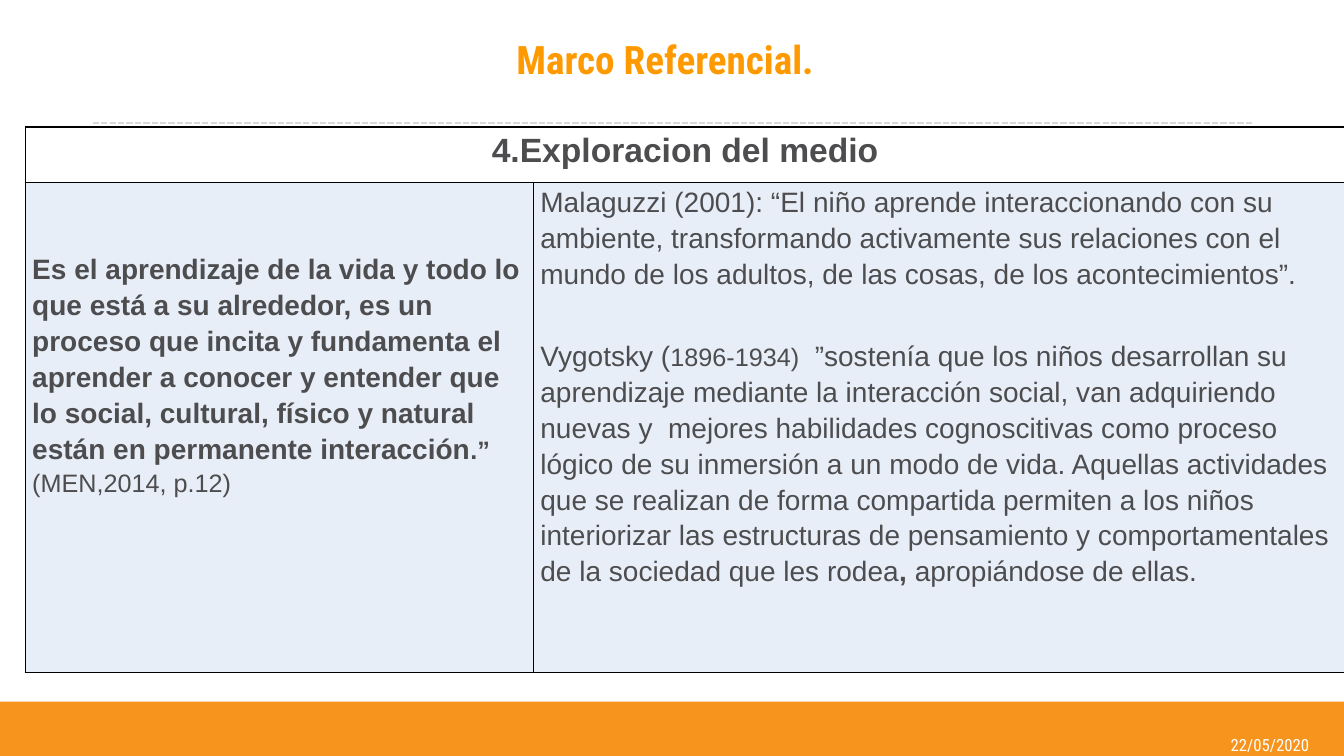
from lxml import etree
from pptx import Presentation
from pptx.dml.color import RGBColor
from pptx.enum.dml import MSO_LINE
from pptx.enum.shapes import MSO_CONNECTOR, MSO_SHAPE
from pptx.enum.text import MSO_ANCHOR, PP_ALIGN
from pptx.oxml.ns import qn
from pptx.util import Inches, Pt

COLORS = {
    "band": "F7941D", "title": "FF9900", "rule": "D9D9D9",
    "text": "4D4D4F", "cell": "E8EEF8", "white": "FFFFFF", "border": "000000",
}
HEADING_FONT = "Roboto Condensed"


def rgb(name):
    return RGBColor.from_string(COLORS[name])


def add_run(p, text, size, color="text", font="Arial", bold=False):
    r = p.add_run()
    r.text = text
    r.font.size = Pt(size)
    r.font.name = font
    r.font.bold = bold
    r.font.color.rgb = rgb(color)


prs = Presentation()
prs.slide_width, prs.slide_height = Inches(13.33), Inches(7.5)
slide = prs.slides.add_slide(prs.slide_layouts[5])
shapes = slide.shapes

# Footer band with the date
band = shapes.add_shape(MSO_SHAPE.RECTANGLE, 0, Inches(6.96), Inches(13.33), Inches(0.56))
band.shadow.inherit = False
band.fill.solid()
band.fill.fore_color.rgb = rgb("band")
band.line.fill.background()

date = shapes.add_textbox(Inches(11.89), Inches(7.28), Inches(1.41), Inches(0.21))
tf = date.text_frame
tf.word_wrap = True
tf.vertical_anchor = MSO_ANCHOR.MIDDLE
tf.margin_top = tf.margin_bottom = 0
tf.paragraphs[0].alignment = PP_ALIGN.CENTER
add_run(tf.paragraphs[0], "22/05/2020", 12, "white", HEADING_FONT)

# Title and dashed rule
rule = shapes.add_connector(MSO_CONNECTOR.STRAIGHT, Inches(0.92), Inches(1.22),
                            Inches(12.42), Inches(1.22))
rule.line.color.rgb = rgb("rule")
rule.line.width = Pt(1.5)
rule.line.dash_style = MSO_LINE.SQUARE_DOT
etree.SubElement(rule._element.spPr, qn("a:effectLst"))

title = shapes.title
title.left, title.top = Inches(0.89), Inches(0.13)
title.width, title.height = Inches(11.5), Inches(0.91)
tf = title.text_frame
tf.vertical_anchor = MSO_ANCHOR.MIDDLE
tf.paragraphs[0].alignment = PP_ALIGN.CENTER
add_run(tf.paragraphs[0], "Marco Referencial. ", 28, "title", HEADING_FONT, True)

# Table: each cell is a list of paragraphs, each paragraph a list of (text, size, bold)
heading = [[("4.Exploracion del medio", 24, True)]]
definition = [
    [("Es el aprendizaje de la vida y todo lo que está a su alrededor, es un proceso que "
      "incita y fundamenta el aprender a conocer y entender que lo social, cultural, físico "
      "y natural están en permanente interacción", 20, True), (".”", 18, True)],
    [("(MEN,2014, p.12)", 18, False)],
]
authors = [
    [("Malaguzzi (2001): “El niño aprende interaccionando con su ambiente, transformando "
      "activamente sus relaciones con el mundo de los adultos, de las cosas, de los "
      "acontecimientos”.", 20, False)],
    [("Vygotsky (", 20, False), ("1896-1934)", 18, False),
     ("  ”sostenía que los niños desarrollan su aprendizaje mediante la interacción social, "
      "van adquiriendo nuevas y  mejores habilidades cognoscitivas como proceso lógico de su "
      "inmersión a un modo de vida. Aquellas actividades que se realizan de forma compartida "
      "permiten a los niños interiorizar las estructuras de pensamiento y comportamentales de "
      "la sociedad que les rodea", 20, False),
     (", ", 20, True), ("apropiándose de ellas.", 20, False)],
]

table = shapes.add_table(2, 2, Inches(0.25), Inches(1.26), Inches(13.09), Inches(5.41)).table
table.first_row = table.horz_banding = False
for column, width in zip(table.columns, (5.04, 8.05)):
    column.width = Inches(width)
for row, height in zip(table.rows, (0.55, 4.86)):
    row.height = Inches(height)
table.cell(0, 0).merge(table.cell(0, 1))

contents = {(0, 0): heading, (1, 0): definition, (1, 1): authors}
for row in range(2):
    for col in range(2):
        cell = table.cell(row, col)
        cell.margin_left = cell.margin_right = Inches(0.07)
        cell.margin_top = cell.margin_bottom = 0
        cell.fill.solid()
        cell.fill.fore_color.rgb = rgb("cell" if row else "white")
        tcPr = cell._tc.get_or_add_tcPr()
        for i, side in enumerate(("lnL", "lnR", "lnT", "lnB")):
            ln = etree.Element(qn(f"a:{side}"), w=str(Pt(1)))
            fill = etree.SubElement(ln, qn("a:solidFill"))
            etree.SubElement(fill, qn("a:srgbClr"), val=COLORS["border"])
            tcPr.insert(i, ln)
        tf = cell.text_frame
        for i, runs in enumerate(contents.get((row, col), [])):
            p = tf.add_paragraph() if i else tf.paragraphs[0]
            p.line_spacing = 1.15
            for text, size, bold in runs:
                add_run(p, text, size, bold=bold)

table.cell(0, 0).text_frame.paragraphs[0].alignment = PP_ALIGN.CENTER
table.cell(1, 0).margin_top = Inches(0.67)
table.cell(1, 1).text_frame.paragraphs[1].space_before = Pt(33)

prs.save("out.pptx")
